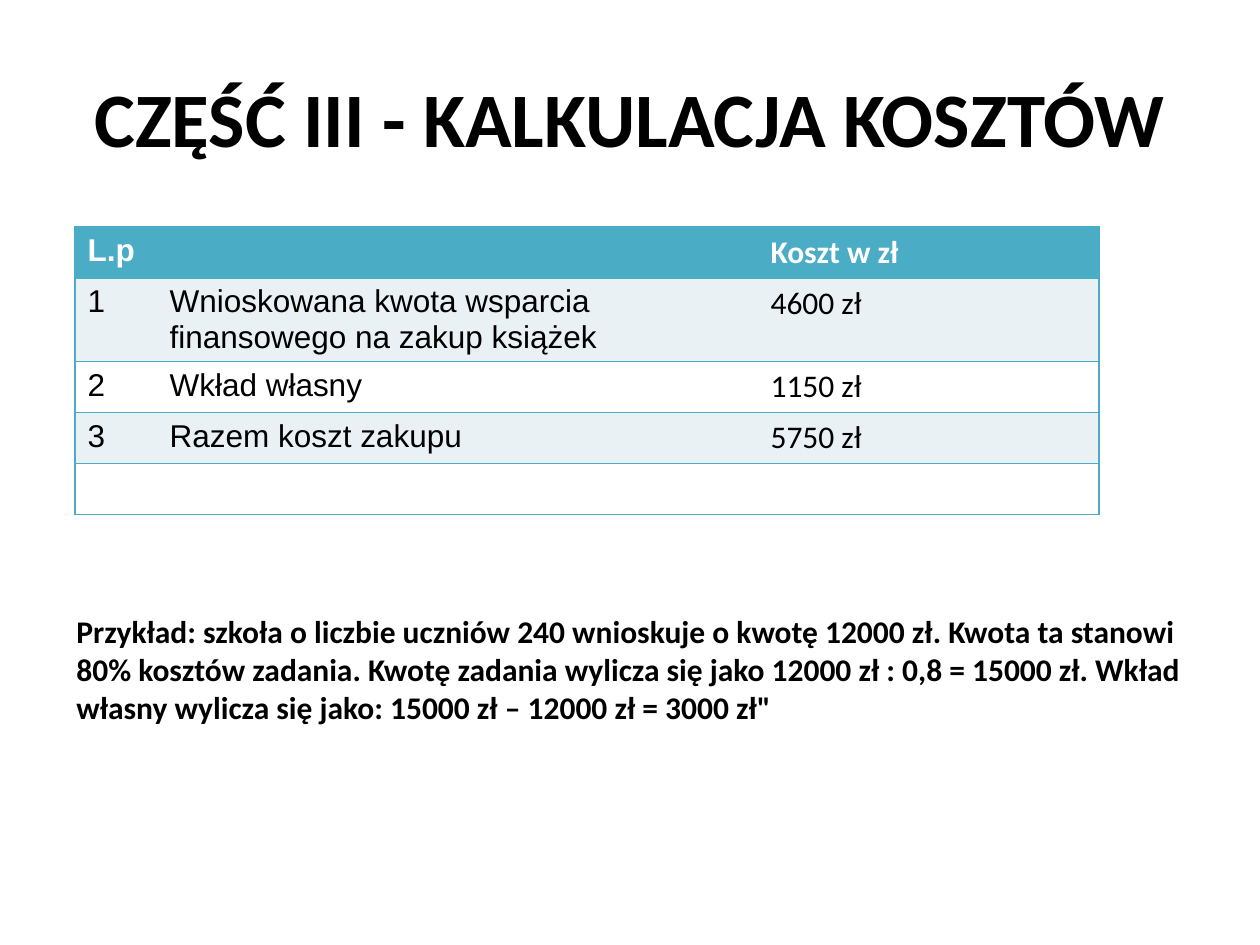
from dataclasses import dataclass

from lxml import etree
from pptx import Presentation
from pptx import util as u
from pptx.dml import color
from pptx.enum import text
from pptx.oxml import ns

EMU_PER_INCH = 914400
PX_PER_INCH = 126


@dataclass(frozen=True)
class Theme:
    accent: str = "4BACC6"
    band: str = "E9F1F5"
    white: str = "FFFFFF"
    black: str = "000000"
    heading_font: str = "Calibri"
    label_font: str = "Arial"
    title_size: int = 44
    body_size: int = 18
    border_width: int = 1


def px(length):
    return u.Emu(round(length * EMU_PER_INCH / PX_PER_INCH))


class SlideBuilder:
    def __init__(self, slide, theme):
        self.slide = slide
        self.theme = theme

    def add_run(self, paragraph, content, size, font, ink, bold):
        run = paragraph.add_run()
        run.text = content
        run.font.size = u.Pt(size)
        run.font.name = font
        run.font.bold = bold
        run.font.color.rgb = color.RGBColor.from_string(ink)

    def place(self, shape, box):
        shape.left, shape.top, shape.width, shape.height = map(px, box)

    def title(self, content, box):
        shape = self.slide.shapes.title
        self.place(shape, box)
        frame = shape.text_frame
        frame.vertical_anchor = text.MSO_ANCHOR.MIDDLE
        paragraph = frame.paragraphs[0]
        paragraph.alignment = text.PP_ALIGN.CENTER
        self.add_run(paragraph, content, self.theme.title_size,
                     self.theme.heading_font, self.theme.black, True)

    def paragraph_box(self, content, box):
        shape = self.slide.shapes.add_textbox(*map(px, box))
        frame = shape.text_frame
        frame.word_wrap = True
        frame.auto_size = text.MSO_AUTO_SIZE.SHAPE_TO_FIT_TEXT
        self.add_run(frame.paragraphs[0], content, self.theme.body_size,
                     self.theme.heading_font, self.theme.black, True)

    def border(self, cell, side, visible):
        properties = cell._tc.get_or_add_tcPr()
        line = etree.SubElement(properties, ns.qn(f"a:ln{side}"),
                                w=str(u.Pt(self.theme.border_width)))
        if visible:
            fill = etree.SubElement(line, ns.qn("a:solidFill"))
            etree.SubElement(fill, ns.qn("a:srgbClr"), val=self.theme.accent)
        else:
            etree.SubElement(line, ns.qn("a:noFill"))

    def cell(self, cell, content, fill, font, ink, bold, visible_sides):
        for side in "LRTB":
            self.border(cell, side, side in visible_sides)
        cell.fill.solid()
        cell.fill.fore_color.rgb = color.RGBColor.from_string(fill)
        paragraph = cell.text_frame.paragraphs[0]
        if content:
            self.add_run(paragraph, content, self.theme.body_size, font, ink, bold)
        else:
            paragraph.font.size = u.Pt(self.theme.body_size)

    def table(self, rows, left, top, column_widths, row_height):
        theme = self.theme
        last = len(column_widths) - 1
        frame = self.slide.shapes.add_table(
            len(rows), len(column_widths), px(left), px(top),
            px(sum(column_widths)), px(row_height * len(rows)))
        table = frame.table
        table.first_row = False
        table.horz_banding = False
        for column, width in zip(table.columns, column_widths):
            column.width = px(width)
        for row_index, values in enumerate(rows):
            table.rows[row_index].height = px(row_height)
            header = row_index == 0
            fill = theme.accent if header else theme.band if row_index % 2 else theme.white
            ink = theme.white if header else theme.black
            for column_index, content in enumerate(values):
                sides = "TB" + "L" * (column_index == 0) + "R" * (column_index == last)
                font = theme.heading_font if column_index == last else theme.label_font
                self.cell(table.cell(row_index, column_index), content,
                          fill, font, ink, header, sides)


def main():
    presentation = Presentation()
    presentation.slide_width = px(1260)
    presentation.slide_height = px(945)
    title_only = presentation.slide_layouts[5]
    builder = SlideBuilder(presentation.slides.add_slide(title_only), Theme())

    builder.title("CZĘŚĆ III - KALKULACJA KOSZTÓW", (63, 38, 1134, 158))
    cost_rows = [
        ("L.p", "", "Koszt w zł"),
        ("1", "Wnioskowana kwota wsparcia finansowego na zakup książek", "4600 zł"),
        ("2", "Wkład własny", "1150 zł"),
        ("3", "Razem koszt zakupu", "5750 zł"),
        ("", "", ""),
    ]
    builder.table(cost_rows, left=75, top=227, column_widths=(82, 601, 341), row_height=49)
    builder.paragraph_box(
        "Przykład: szkoła o liczbie uczniów 240 wnioskuje o kwotę 12000 zł. "
        "Kwota ta stanowi 80% kosztów zadania. Kwotę zadania wylicza się jako "
        "12000 zł : 0,8 = 15000 zł. Wkład własny wylicza się jako: "
        "15000 zł – 12000 zł = 3000 zł\"",
        (64, 606, 1142, 127))
    presentation.save("out.pptx")


if __name__ == "__main__":
    main()
